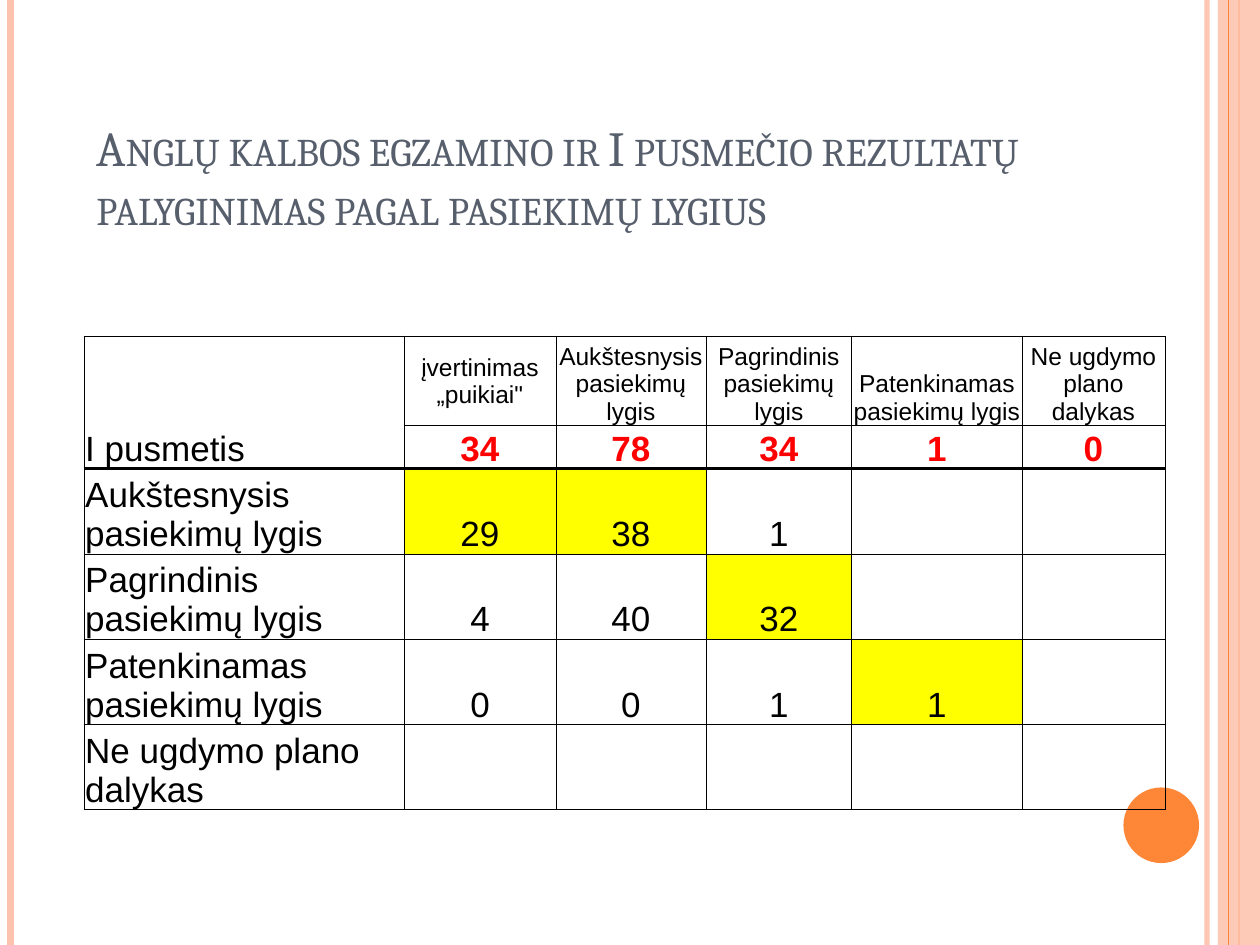
"""Build a slide comparing English exam results with first-term results."""
from lxml import etree
from pptx import Presentation
from pptx.dml.color import RGBColor
from pptx.enum.shapes import MSO_CONNECTOR, MSO_SHAPE
from pptx.enum.text import MSO_ANCHOR, PP_ALIGN
from pptx.oxml.ns import qn
from pptx.util import Pt

STRAIGHT = MSO_CONNECTOR.STRAIGHT
RECTANGLE, OVAL = MSO_SHAPE.RECTANGLE, MSO_SHAPE.OVAL
BOTTOM, MIDDLE = MSO_ANCHOR.BOTTOM, MSO_ANCHOR.MIDDLE
LEFT, CENTER = PP_ALIGN.LEFT, PP_ALIGN.CENTER
PEACH, ORANGE, SLATE = "FEC3AE", "FE8637", "575F6D"
BLACK, RED, YELLOW = "000000", "FF0000", "FFFF00"
SLIDE_HEIGHT = 540


def color(hex_code):
    return RGBColor.from_string(hex_code)


def set_alpha(element, percent):
    for fill_color in element.iter(qn("a:srgbClr")):
        etree.SubElement(fill_color, qn("a:alpha"), val=str(percent * 1000))


presentation = Presentation()
presentation.slide_width, presentation.slide_height = Pt(720), Pt(SLIDE_HEIGHT)
slide = presentation.slides.add_slide(presentation.slide_layouts[6])
shapes = slide.shapes

stripes = [
    (689.8, PEACH, 3, 93),
    (6, PEACH, 4.5, 100),
    (708, ORANGE, 1.5, 100),
    (702, ORANGE, 0.75, 100),
]
blocks = [
    (RECTANGLE, 696, 0, 24, SLIDE_HEIGHT, PEACH, 87),
    (OVAL, 642, 450, 43.2, 43.2, ORANGE, 100),
]
stripe_shapes = []
for x, stripe_color, width, alpha in stripes:
    stripe = shapes.add_connector(STRAIGHT, Pt(x), Pt(0), Pt(x), Pt(SLIDE_HEIGHT))
    stripe.line.color.rgb = color(stripe_color)
    stripe.line.width = Pt(width)
    properties = stripe._element.spPr
    if alpha < 100:
        set_alpha(properties, alpha)
    etree.SubElement(properties, qn("a:effectLst"))
    stripe_shapes.append(stripe)

for kind, left, top, width, height, block_color, alpha in blocks:
    block = shapes.add_shape(kind, Pt(left), Pt(top), Pt(width), Pt(height))
    block.shadow.inherit = False
    block.fill.solid()
    block.fill.fore_color.rgb = color(block_color)
    block.line.fill.background()
    if alpha < 100:
        set_alpha(block._element.spPr, alpha)
    if kind == RECTANGLE:
        block._element.addnext(stripe_shapes[-1]._element)

title = shapes.add_textbox(Pt(48), Pt(48), Pt(588), Pt(90))
title.text_frame.word_wrap = True
title.text_frame.vertical_anchor = BOTTOM
paragraph = title.text_frame.paragraphs[0]
run = paragraph.add_run()
run.text = "Anglų kalbos egzamino ir I pusmečio rezultatų palyginimas pagal pasiekimų lygius"
paragraph.font.name = "Cambria"
paragraph.font.size = Pt(28)
paragraph.font.color.rgb = color(SLATE)
run.font._element.set("cap", "small")

rows = [
    ["I pusmetis", "įvertinimas „puikiai\"", "Aukštesnysis pasiekimų lygis",
     "Pagrindinis pasiekimų lygis", "Patenkinamas pasiekimų lygis",
     "Ne ugdymo plano dalykas"],
    ["", "34", "78", "34", "1", "0"],
    ["Aukštesnysis pasiekimų lygis", "29", "38", "1", "", ""],
    ["Pagrindinis pasiekimų lygis", "4", "40", "32", "", ""],
    ["Patenkinamas pasiekimų lygis", "0", "0", "1", "1", ""],
    ["Ne ugdymo plano dalykas", "", "", "", "", ""],
]
highlighted = {(2, 1), (2, 2), (3, 3), (4, 4)}
column_widths = [182.9, 86.8, 85.7, 83.4, 97.2, 81.7]
row_heights = [48, 22.8] + [45.4] * 4

table_frame = shapes.add_table(len(rows), len(column_widths), Pt(48), Pt(192),
                               Pt(sum(column_widths)), Pt(sum(row_heights)))
table = table_frame.table
table.first_row = table.horz_banding = False
for column, width in zip(table.columns, column_widths):
    column.width = Pt(width)
for row, height in zip(table.rows, row_heights):
    row.height = Pt(height)
table.cell(0, 0).merge(table.cell(1, 0))

for row_index, texts in enumerate(rows):
    for column_index, text in enumerate(texts):
        cell = table.cell(row_index, column_index)
        is_label = column_index == 0
        is_header = row_index == 0 and not is_label
        is_total = row_index == 1
        cell.margin_left = cell.margin_right = cell.margin_top = Pt(0.7)
        cell.margin_bottom = Pt(0)
        cell.vertical_anchor = MIDDLE if (row_index, column_index) == (0, 1) else BOTTOM

        heavy_bottom = is_total or cell.is_merge_origin
        border_widths = {"L": 0.5, "R": 0.5, "T": 2 if row_index == 2 else 0.5,
                         "B": 2 if heavy_bottom else 0.5}
        cell_properties = cell._tc.get_or_add_tcPr()
        for side, width in border_widths.items():
            border = etree.SubElement(cell_properties, qn(f"a:ln{side}"), w=str(Pt(width)))
            border_fill = etree.SubElement(border, qn("a:solidFill"))
            etree.SubElement(border_fill, qn("a:srgbClr"), val=BLACK)
        if (row_index, column_index) in highlighted:
            cell.fill.solid()
            cell.fill.fore_color.rgb = color(YELLOW)
        else:
            cell.fill.background()

        cell.text = text
        paragraph = cell.text_frame.paragraphs[0]
        paragraph.alignment = LEFT if is_label else CENTER
        paragraph.font.name = "Arial"
        paragraph.font.size = Pt(14 if is_header else 20)
        paragraph.font.bold = is_total
        paragraph.font.color.rgb = color(RED if is_total else BLACK)

presentation.save("out.pptx")
